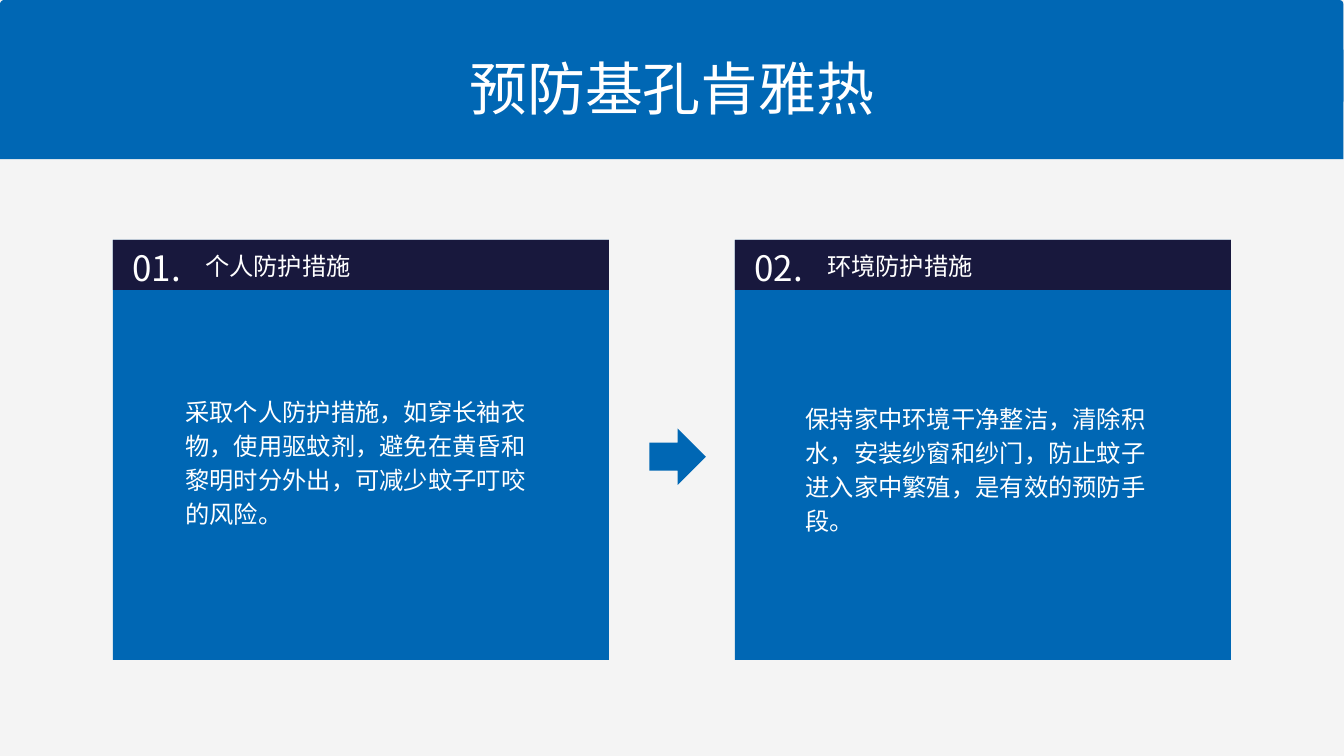
"""Build a slide on preventing chikungunya: a title banner and two linked cards."""
from lxml.etree import SubElement
from pptx import Presentation
from pptx.dml.color import RGBColor
from pptx.enum.shapes import MSO_SHAPE as Shape
from pptx.enum.text import MSO_ANCHOR as Anchor, PP_ALIGN as Align
from pptx.oxml.ns import qn
from pptx.util import Cm, Pt

BLUE = RGBColor(0x00, 0x67, 0xB4)
NAVY = RGBColor(0x18, 0x18, 0x3D)
WHITE = RGBColor(0xFF, 0xFF, 0xFF)
PALE = RGBColor(0xF4, 0xF4, 0xF4)
FONT = "Noto Sans CJK SC"
CARD_LEFT, CARD_TOP, CARD_STEP = 4.27, 9.07, 23.51

MEASURES = [
    ("01.", "个人防护措施", 7.01, 14.83,
     "采取个人防护措施，如穿长袖衣物，使用驱蚊剂，避免在黄昏和黎明时分外出，可减少蚊子叮咬的风险。"),
    ("02.", "环境防护措施", 30.45, 15.11,
     "保持家中环境干净整洁，清除积水，安装纱窗和纱门，防止蚊子进入家中繁殖，是有效的预防手段。"),
]

prs = Presentation()
prs.slide_width, prs.slide_height = Cm(50.8), Cm(28.58)
slide = prs.slides.add_slide(prs.slide_layouts[5])
slide.background.fill.solid()
slide.background.fill.fore_color.rgb = PALE


def add_block(kind, left, top, width, height, color):
    block = slide.shapes.add_shape(kind, Cm(left), Cm(top), Cm(width), Cm(height))
    block.shadow.inherit = False
    block.fill.solid()
    block.fill.fore_color.rgb = color
    block.line.fill.background()
    return block


def write(box, text, size, spacing, align=Align.LEFT):
    frame = box.text_frame
    frame.word_wrap = True
    frame.vertical_anchor = Anchor.TOP
    frame.margin_left = frame.margin_right = frame.margin_top = frame.margin_bottom = 0
    paragraph = frame.paragraphs[0]
    paragraph.text = text
    paragraph.alignment = align
    paragraph.line_spacing = Pt(spacing)
    font = paragraph.font
    font.size, font.name, font.color.rgb = Pt(size), FONT, WHITE
    SubElement(font._element, qn("a:ea")).set("typeface", FONT)


banner_top = add_block(Shape.ROUNDED_RECTANGLE, 0, 0, 50.78, 3.96, BLUE)
banner_top.adjustments[0] = 0.04
add_block(Shape.RECTANGLE, 0, 1.88, 50.78, 4.14, BLUE)

title = slide.shapes.title
title.left, title.top, title.width, title.height = Cm(9.1), Cm(1.55), Cm(32.6), Cm(2.92)
write(title, "预防基孔肯雅热", 62, 86.8, Align.CENTER)
title.element.getparent().append(title.element)

for index, (number, heading, advice_left, advice_top, advice) in enumerate(MEASURES):
    left = CARD_LEFT + index * CARD_STEP
    add_block(Shape.RECTANGLE, left, CARD_TOP, 18.75, 15.88, BLUE)
    add_block(Shape.RECTANGLE, left, CARD_TOP, 18.75, 1.89, NAVY)
    for text, x, y, width, height, size, spacing in (
        (number, left + 0.73, 9.04, 3.2, 1.73, 37.5, 52.4),
        (heading, left + 3.48, 9.32, 13.82, 1.22, 26, 36.4),
        (advice, advice_left, advice_top, 13.3, 5.03, 26, 36.4),
    ):
        box = slide.shapes.add_textbox(Cm(x), Cm(y), Cm(width), Cm(height))
        write(box, text, size, spacing)

add_block(Shape.RIGHT_ARROW, 24.55, 16.2, 2.13, 2.13, BLUE)

prs.save("out.pptx")
